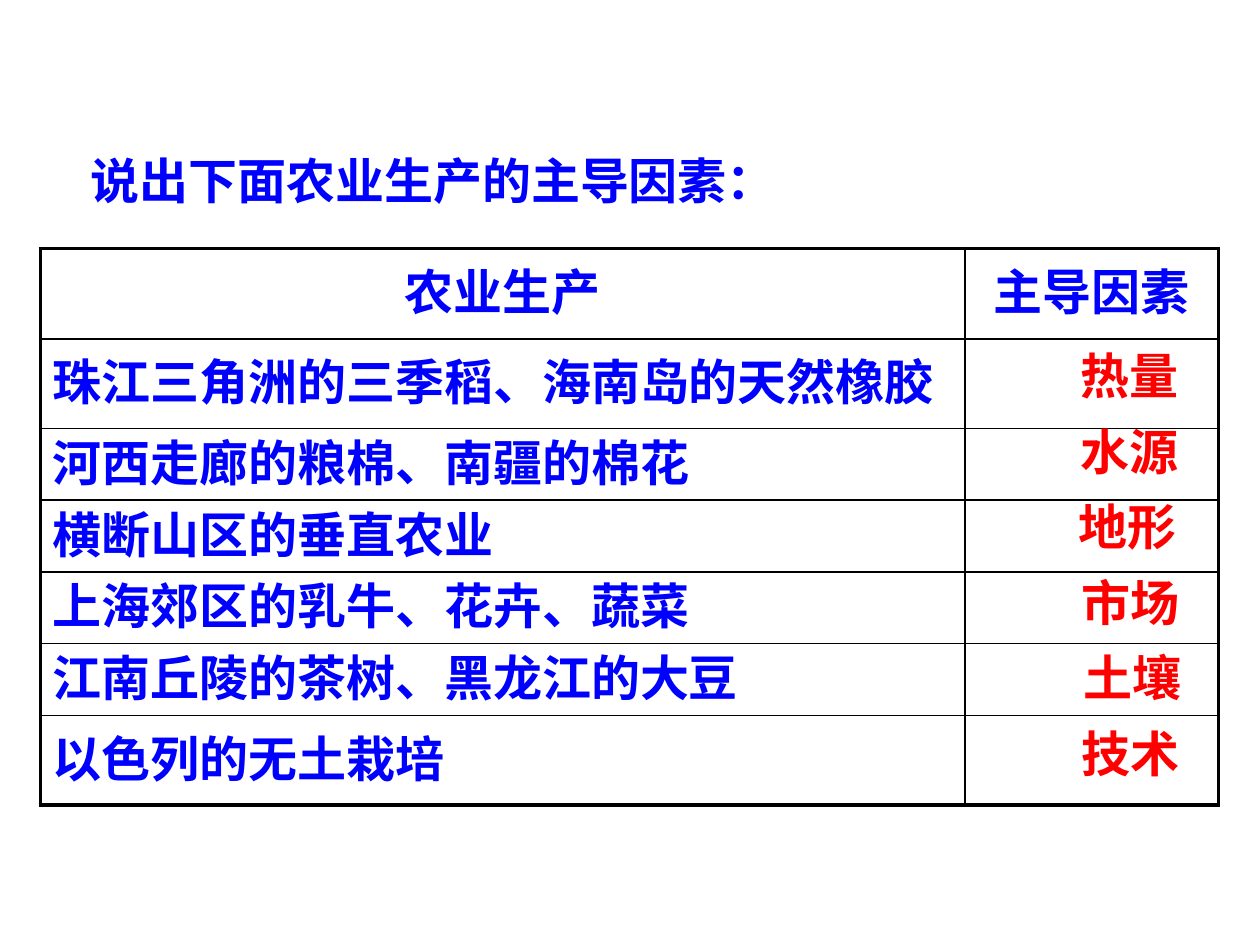
from lxml import etree
from pptx import Presentation
from pptx import util as u
from pptx.dml.color import RGBColor
from pptx.enum import text
from pptx.oxml.ns import qn

COLORS = {"ink": "0000FF", "answer": "FF0000", "border": "000000"}
TITLE = "说出下面农业生产的主导因素："
HEADERS = ["农业生产", "主导因素"]
EXAMPLES = [
    "珠江三角洲的三季稻、海南岛的天然橡胶",
    "河西走廊的粮棉、南疆的棉花",
    "横断山区的垂直农业",
    "上海郊区的乳牛、花卉、蔬菜",
    "江南丘陵的茶树、黑龙江的大豆",
    "以色列的无土栽培",
]
# Each factor with the width of its box
FACTORS = [("热量", 1.77), ("水源", 1.77), ("地形", 1.73),
           ("市场", 1.78), ("土壤", 1.82), ("技术", 1.78)]
COLUMN_WIDTHS = [7.34, 2.01]
ROW_HEIGHTS = [0.72, 0.71] + [0.57] * 4 + [0.71]
TABLE_LEFT, TABLE_TOP = 0.32, 1.97
FACTOR_LEFT, FACTOR_TOP, FACTOR_PITCH = 8.08, 2.69, 0.6
LINE_HEIGHT = 0.57
OUTER, INNER = 2.25, 1


def write(paragraph, words, font, color, align):
    paragraph.alignment = align
    run = paragraph.add_run()
    run.text = words
    run.font.size = u.Pt(28)
    run.font.bold = True
    run.font.name = font
    run.font.color.rgb = RGBColor.from_string(COLORS[color])
    east_asian = etree.SubElement(run.font._element, qn("a:ea"))
    east_asian.set("typeface", font)


def set_borders(cell, widths):
    """Draw the left, right, top and bottom lines, widths in points."""
    properties = cell._tc.get_or_add_tcPr()
    for index, (side, width) in enumerate(zip("LRTB", widths)):
        line = etree.Element(qn(f"a:ln{side}"), w=str(u.Pt(width)))
        fill = etree.SubElement(line, qn("a:solidFill"))
        etree.SubElement(fill, qn("a:srgbClr"), val=COLORS["border"])
        properties.insert(index, line)


def add_title(slide):
    title = slide.shapes.title
    title.left, title.top = u.Inches(0.62), u.Inches(1.14)
    title.width, title.height = u.Inches(7.8), u.Inches(LINE_HEIGHT)
    frame = title.text_frame
    frame.auto_size = text.MSO_AUTO_SIZE.NONE
    frame.vertical_anchor = text.MSO_ANCHOR.MIDDLE
    write(frame.paragraphs[0], TITLE, "Noto Sans CJK SC", "ink", text.PP_ALIGN.LEFT)


def add_production_table(slide):
    rows, columns = len(ROW_HEIGHTS), len(COLUMN_WIDTHS)
    table = slide.shapes.add_table(
        rows, columns, u.Inches(TABLE_LEFT), u.Inches(TABLE_TOP),
        u.Inches(sum(COLUMN_WIDTHS)), u.Inches(sum(ROW_HEIGHTS))).table
    table.first_row = table.horz_banding = False
    for column, width in zip(table.columns, COLUMN_WIDTHS):
        column.width = u.Inches(width)
    for row, height in zip(table.rows, ROW_HEIGHTS):
        row.height = u.Inches(height)

    contents = [HEADERS] + [[example, ""] for example in EXAMPLES]
    for r, row in enumerate(contents):
        for c, words in enumerate(row):
            cell = table.cell(r, c)
            cell.fill.background()
            cell.vertical_anchor = text.MSO_ANCHOR.MIDDLE
            edges = [c == 0, c == columns - 1, r == 0, r == rows - 1]
            set_borders(cell, [OUTER if edge else INNER for edge in edges])
            if words:
                paragraph = cell.text_frame.paragraphs[0]
                paragraph.space_before = u.Pt(5.6)
                align = text.PP_ALIGN.CENTER if r == 0 else text.PP_ALIGN.LEFT
                write(paragraph, words, "Arial", "ink", align)


def add_factor(slide, index, words, width):
    box = slide.shapes.add_textbox(
        u.Inches(FACTOR_LEFT), u.Inches(FACTOR_TOP + index * FACTOR_PITCH),
        u.Inches(width), u.Inches(LINE_HEIGHT))
    frame = box.text_frame
    frame.word_wrap = True
    frame.vertical_anchor = text.MSO_ANCHOR.MIDDLE
    write(frame.paragraphs[0], words, "Comic Neue", "answer", text.PP_ALIGN.CENTER)


def main():
    presentation = Presentation()
    presentation.slide_width, presentation.slide_height = u.Inches(10), u.Inches(7.5)
    slide = presentation.slides.add_slide(presentation.slide_layouts[5])
    add_title(slide)
    add_production_table(slide)
    for index, (words, width) in enumerate(FACTORS):
        add_factor(slide, index, words, width)
    presentation.save("out.pptx")


if __name__ == "__main__":
    main()
